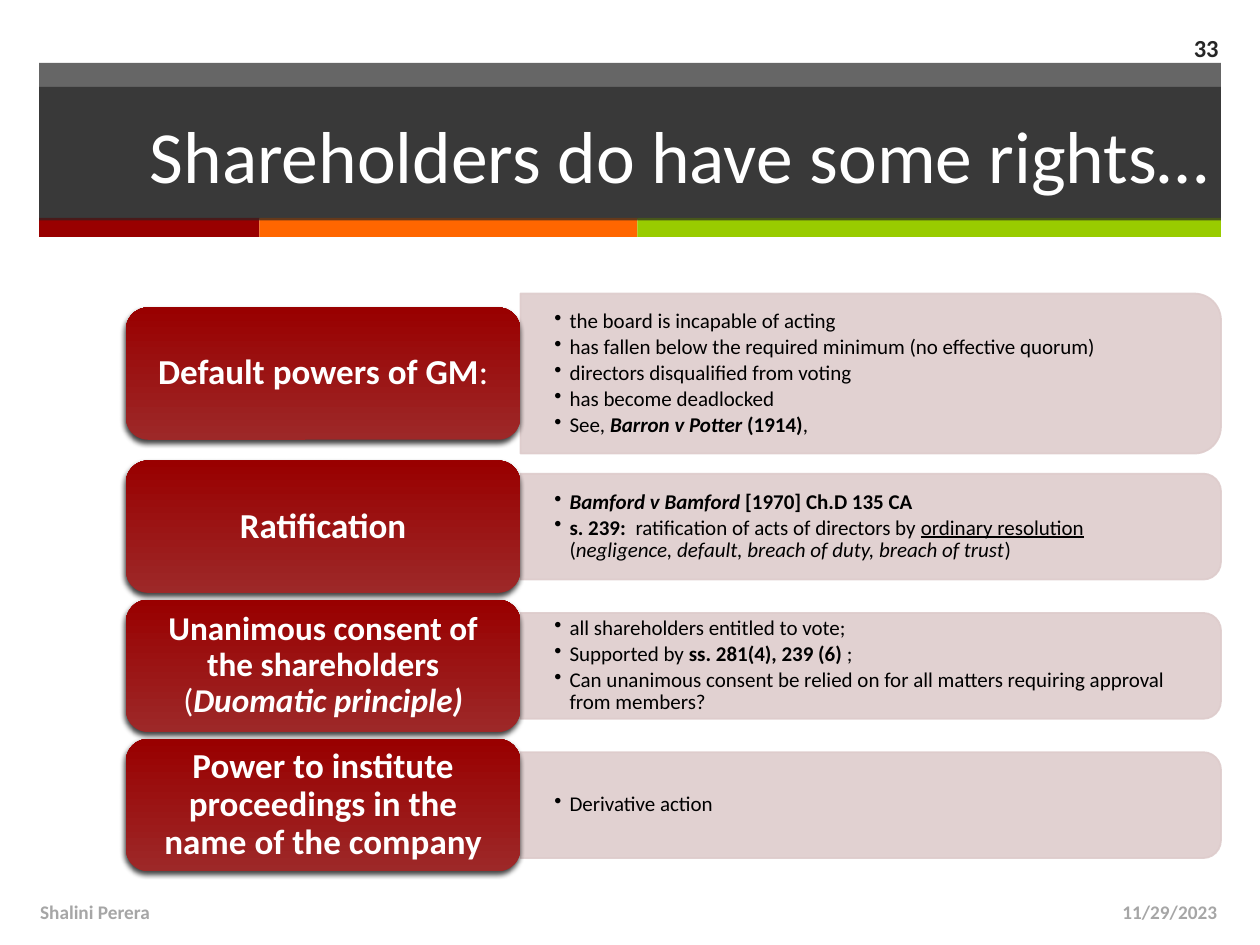
from dataclasses import dataclass

from lxml import etree
from pptx import Presentation
from pptx.dml.color import RGBColor
from pptx.enum.shapes import MSO_SHAPE
from pptx.enum.text import MSO_ANCHOR, PP_ALIGN
from pptx.oxml.ns import qn
from pptx.util import Inches, Pt

RECT, ROUNDED = MSO_SHAPE.RECTANGLE, MSO_SHAPE.ROUNDED_RECTANGLE
TWO_ROUNDED = MSO_SHAPE.ROUND_2_SAME_RECTANGLE
LEFT, CENTER, RIGHT = PP_ALIGN.LEFT, PP_ALIGN.CENTER, PP_ALIGN.RIGHT
MIDDLE = MSO_ANCHOR.MIDDLE

# The page is a grid of 100 columns by 75 rows
COLUMNS, ROWS = 100, 75
WIDTH, HEIGHT = Inches(10), Inches(7.5)

WHITE, BLACK, CHARCOAL, GREY = "FFFFFF", "000000", "262626", "A6A6A6"
RED, BRICK, ORANGE, GREEN, BLUSH = "990000", "9D2828", "FF6600", "99CC00", "DECCCC"


@dataclass
class Area:
    left: float
    top: float
    width: float
    height: float

    def lengths(self) -> list[int]:
        across, down = WIDTH / COLUMNS, HEIGHT / ROWS
        return [round(self.left * across), round(self.top * down),
                round(self.width * across), round(self.height * down)]


@dataclass
class Span:
    text: str
    marks: str = ""  # any of b, i, u


@dataclass
class Topic:
    label: list[Span]
    points: list[list[Span]]
    middle: float  # row of the vertical centre
    panel_height: float = 8.4
    label_size: float = 20


@dataclass
class TextStyle:
    size: float
    color: str
    align: PP_ALIGN = LEFT
    insets: tuple[float, float] = (0.1, 0.05)  # horizontal, vertical
    line_spacing: float = 1.0
    space_after: float = 0
    bullet: bool = False


def color_of(value: str) -> RGBColor:
    return RGBColor.from_string(value)


def apply(target, formats: dict) -> None:
    for name, value in formats.items():
        setattr(target, name, value)


def add_bullet(para) -> None:
    properties = para._p.get_or_add_pPr()
    properties.set("marL", str(Inches(0.12)))
    properties.set("indent", str(-Inches(0.12)))
    etree.SubElement(properties, qn("a:buChar"), char="•")


def write(shape, paragraphs: list[list[Span]], style: TextStyle) -> None:
    frame = shape.text_frame
    side, edge = (Inches(inset) for inset in style.insets)
    apply(frame, {"word_wrap": True, "vertical_anchor": MIDDLE,
                  "margin_left": side, "margin_right": side,
                  "margin_top": edge, "margin_bottom": edge})
    for index, spans in enumerate(paragraphs):
        para = frame.add_paragraph() if index else frame.paragraphs[0]
        apply(para, {"alignment": style.align, "line_spacing": style.line_spacing,
                     "space_after": Pt(style.space_after)})
        if style.bullet:
            add_bullet(para)
        for span in spans:
            run = para.add_run()
            run.text = span.text
            apply(run.font, {"name": "Calibri", "size": Pt(style.size),
                             "bold": "b" in span.marks, "italic": "i" in span.marks,
                             "underline": "u" in span.marks})
            run.font.color.rgb = color_of(style.color)


def add_text(page, area: Area, paragraphs: list[list[Span]], style: TextStyle) -> None:
    write(page.shapes.add_textbox(*area.lengths()), paragraphs, style)


def add_block(page, kind, area: Area, fill: str, opacity: int = 100, line: str = ""):
    shape = page.shapes.add_shape(kind, *area.lengths())
    shape.shadow.inherit = False
    shape.fill.solid()
    shape.fill.fore_color.rgb = color_of(fill)
    if line:
        shape.line.color.rgb = color_of(line)
        shape.line.width = Pt(1)
    else:
        shape.line.fill.background()
    if opacity < 100:
        for color in shape._element.spPr.iter(qn("a:srgbClr")):
            etree.SubElement(color, qn("a:alpha"), val=str(opacity * 1000))
    return shape


def add_glow_and_gradient(shape) -> None:
    shape.fill.gradient()
    shape.fill.gradient_angle = 90
    for stop, value in zip(shape.fill.gradient_stops, (BRICK, RED)):
        stop.color.rgb = color_of(value)
    effects = shape._element.spPr.find(qn("a:effectLst"))
    shadow = etree.SubElement(effects, qn("a:outerShdw"), blurRad=str(Pt(3)),
                              dist=str(Pt(2)), dir=str(110 * 60000), rotWithShape="0")
    color = etree.SubElement(shadow, qn("a:srgbClr"), val=BLACK)
    etree.SubElement(color, qn("a:alpha"), val="75000")


def add_topic(page, topic: Topic) -> None:
    # Panel: a quarter turn puts the two round corners on the right
    length, height, center = 55.6, topic.panel_height, 69.1
    panel = add_block(page, TWO_ROUNDED,
                      Area(center - height / 2, topic.middle - length / 2, height, length),
                      BLUSH, 90, BLUSH)
    panel.rotation = 90
    add_text(page, Area(41.3, topic.middle - height / 2 + 0.4, 55.2, height - 0.8),
             topic.points,
             TextStyle(12, BLACK, insets=(0.27, 0.14), line_spacing=0.9,
                       space_after=1.8, bullet=True))
    # Label
    label = add_block(page, ROUNDED, Area(10, topic.middle - 5.25, 31.3, 10.5), RED)
    add_glow_and_gradient(label)
    write(label, [topic.label],
          TextStyle(topic.label_size, WHITE, CENTER, (0.13, 0.09), 0.9))


FIRST_MIDDLE, SECOND_MIDDLE, PITCH = 29.65, 41.8, 11.05
TOPICS = [
    Topic([Span("Default powers of GM", "b"), Span(":")],
          [[Span("the board is incapable of acting")],
           [Span("has fallen below the required minimum (no effective quorum)")],
           [Span("directors disqualified from voting")],
           [Span("has become deadlocked")],
           [Span("See, "), Span("Barron v Potter ", "bi"), Span("(1914)", "b"), Span(",")]],
          FIRST_MIDDLE, panel_height=12.7),
    Topic([Span("Ratification", "b")],
          [[Span("Bamford v Bamford ", "bi"), Span("[1970] Ch.D 135 CA", "b")],
           [Span("s. 239:  ", "b"), Span("ratification of acts of directors by "),
            Span("ordinary resolution", "u"), Span(" ("),
            Span("negligence, default, breach of duty, breach of trust", "i"), Span(")")]],
          SECOND_MIDDLE),
    Topic([Span("Unanimous consent of the shareholders", "b"), Span(" ("),
           Span("Duomatic principle)", "bi")],
          [[Span("all shareholders entitled to vote;")],
           [Span("Supported by "), Span("ss. 281(4), 239 (6)", "b"), Span(" ;")],
           [Span("Can unanimous consent be relied on for all matters requiring "
                 "approval from members?")]],
          SECOND_MIDDLE + PITCH, label_size=19),
    Topic([Span("Power to institute proceedings in the name of the company", "b")],
          [[Span("Derivative action")]],
          SECOND_MIDDLE + 2 * PITCH),
]


def main() -> None:
    deck = Presentation()
    deck.slide_width, deck.slide_height = WIDTH, HEIGHT
    page = deck.slides.add_slide(deck.slide_layouts[6])

    # Header band, colour strip and title
    margin, band = 3.1, 93.8
    add_block(page, RECT, Area(margin, 5, band, 12.4), CHARCOAL, 70)
    left = margin
    for width, color in ((17.5, RED), (30, ORANGE), (46.3, GREEN)):
        add_block(page, RECT, Area(left, 17.3, width, 1.5), color)
        left += width
    title = add_block(page, RECT, Area(margin, 6.9, band, 10.6), CHARCOAL, 70)
    write(title, [[Span("Shareholders do have some rights…")]], TextStyle(42, WHITE, RIGHT))

    for topic in TOPICS:
        add_topic(page, topic)

    # Date, author and page number
    for area, text, style in (
        (Area(74.3, 70.4, 23.3, 4), "11/29/2023", TextStyle(11, GREY, RIGHT)),
        (Area(2.2, 70.4, 67, 4), "Shalini Perera", TextStyle(11, GREY)),
        (Area(90.8, 1.8, 6.9, 3.9), "33", TextStyle(14, CHARCOAL, RIGHT)),
    ):
        add_text(page, area, [[Span(text, "b")]], style)

    deck.save("out.pptx")


if __name__ == "__main__":
    main()
